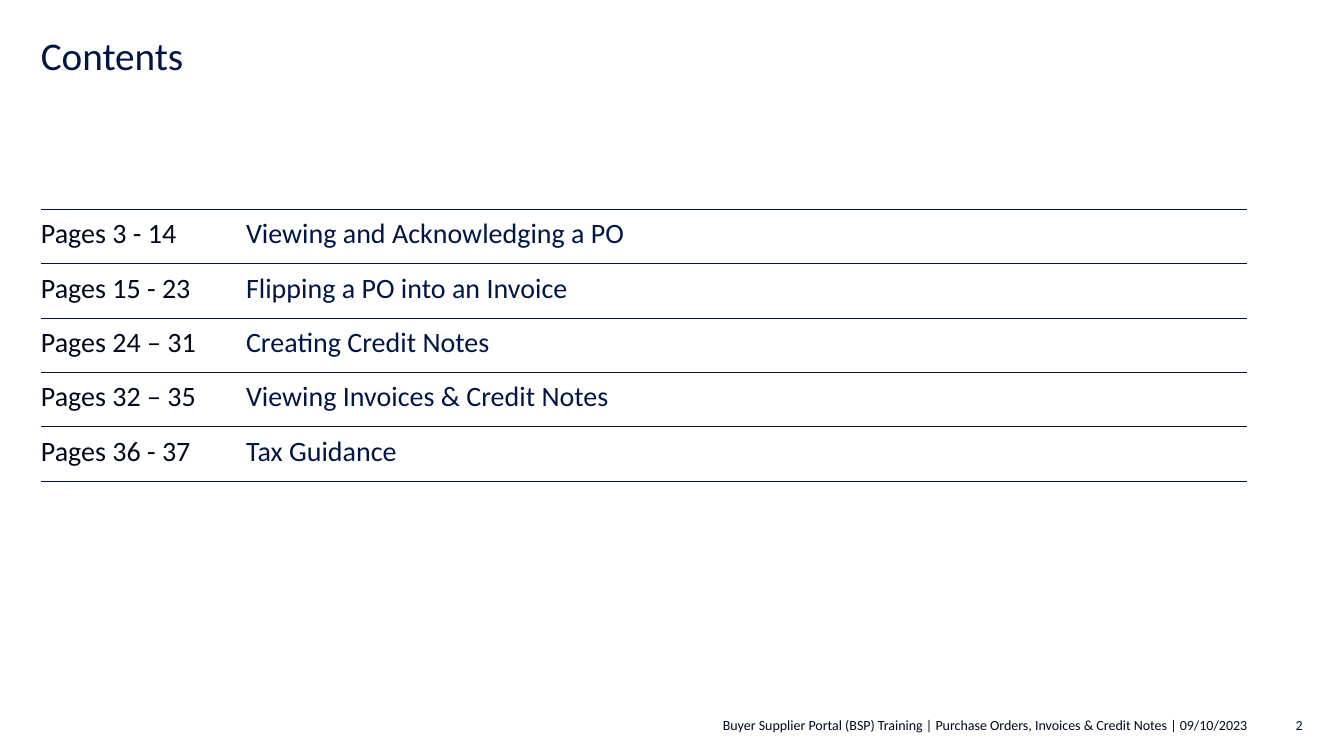
from dataclasses import dataclass

from lxml import etree
from pptx import Presentation
from pptx.dml.color import RGBColor
from pptx.enum.text import MSO_ANCHOR, MSO_AUTO_SIZE, PP_ALIGN
from pptx.oxml.ns import qn
from pptx.util import Cm, Pt

TOP = MSO_ANCHOR.TOP
NO_AUTOFIT = MSO_AUTO_SIZE.NONE
LEFT, RIGHT = PP_ALIGN.LEFT, PP_ALIGN.RIGHT
TITLE_ONLY = 5


@dataclass(frozen=True)
class Theme:
    font: str = "Calibri"
    navy: str = "011546"
    ink: str = "02081E"
    title_size: int = 28
    table_size: int = 20
    footer_size: int = 10
    rule_width: float = 0.5


THEME = Theme()

MARGIN = 1.03
CONTENT_WIDTH = 30.4
CONTENT_RIGHT = MARGIN + CONTENT_WIDTH
FOOTER_TOP = 18.06
FOOTER_HEIGHT = 0.99
FOOTER_WIDTH = 14.5

CONTENTS = [
    ("Pages 3 - 14", "Viewing and Acknowledging a PO"),
    ("Pages 15 - 23", "Flipping a PO into an Invoice"),
    ("Pages 24 – 31", "Creating Credit Notes"),
    ("Pages 32 – 35", "Viewing Invoices & Credit Notes"),
    ("Pages 36 - 37", "Tax Guidance"),
]


def write(tf, text, *, size, color, align=LEFT, spacing=1.0):
    """Put one formatted paragraph into a text frame."""
    tf.word_wrap = True
    p = tf.paragraphs[0]
    p.alignment = align
    p.line_spacing = spacing
    r = p.add_run()
    r.text = text
    r.font.name = THEME.font
    r.font.size = Pt(size)
    r.font.color.rgb = RGBColor.from_string(color)


def clear_margins(tf):
    tf.margin_left = tf.margin_right = tf.margin_top = tf.margin_bottom = 0
    tf.vertical_anchor = TOP
    tf.auto_size = NO_AUTOFIT


def rule_cell(cell, color, width):
    """Draw lines above and below a cell, and none at its sides."""
    cell.fill.background()
    tc_pr = cell._tc.get_or_add_tcPr()
    for i, side in enumerate(("lnL", "lnR", "lnT", "lnB")):
        ln = etree.Element(qn(f"a:{side}"), w=str(Pt(width)))
        if side in ("lnT", "lnB"):
            fill = etree.SubElement(ln, qn("a:solidFill"))
            etree.SubElement(fill, qn("a:srgbClr"), val=color)
        else:
            etree.SubElement(ln, qn("a:noFill"))
        tc_pr.insert(i, ln)


class SlideBuilder:
    def __init__(self, prs, theme):
        self.theme = theme
        self.slide = prs.slides.add_slide(prs.slide_layouts[TITLE_ONLY])

    def title(self, text):
        sp = self.slide.shapes.title
        sp.left, sp.top = Cm(MARGIN), Cm(0.92)
        sp.width, sp.height = Cm(CONTENT_WIDTH), Cm(2)
        clear_margins(sp.text_frame)
        write(sp.text_frame, text, size=self.theme.title_size,
              color=self.theme.navy, spacing=0.9)

    def contents_table(self, rows, top, row_height, col_widths):
        table = self.slide.shapes.add_table(
            len(rows), len(col_widths), Cm(MARGIN), Cm(top),
            Cm(sum(col_widths)), Cm(row_height * len(rows))).table
        table.first_row = table.horz_banding = False
        for column, width in zip(table.columns, col_widths):
            column.width = Cm(width)
        colors = (self.theme.ink, self.theme.navy)
        for i, row in enumerate(rows):
            for j, (text, color) in enumerate(zip(row, colors)):
                cell = table.cell(i, j)
                cell.margin_left = cell.margin_right = 0
                cell.margin_top, cell.margin_bottom = Cm(0.2), Cm(0.3)
                write(cell.text_frame, text, size=self.theme.table_size, color=color)
                rule_cell(cell, self.theme.navy, self.theme.rule_width)

    def footer(self, text, left, width, color):
        sp = self.slide.shapes.add_textbox(
            Cm(left), Cm(FOOTER_TOP), Cm(width), Cm(FOOTER_HEIGHT))
        clear_margins(sp.text_frame)
        write(sp.text_frame, text, size=self.theme.footer_size,
              color=color, align=RIGHT)


def main():
    prs = Presentation()
    prs.slide_width, prs.slide_height = Cm(33.87), Cm(19.05)
    s = SlideBuilder(prs, THEME)
    s.title("Contents")
    s.contents_table(CONTENTS, top=5.27, row_height=1.37, col_widths=(5.17, 25.23))
    s.footer("Buyer Supplier Portal (BSP) Training | Purchase Orders, "
             "Invoices & Credit Notes | 09/10/2023",
             CONTENT_RIGHT - FOOTER_WIDTH, FOOTER_WIDTH, THEME.ink)
    s.footer("2", CONTENT_RIGHT, 1.4, THEME.navy)
    prs.save("out.pptx")


if __name__ == "__main__":
    main()
